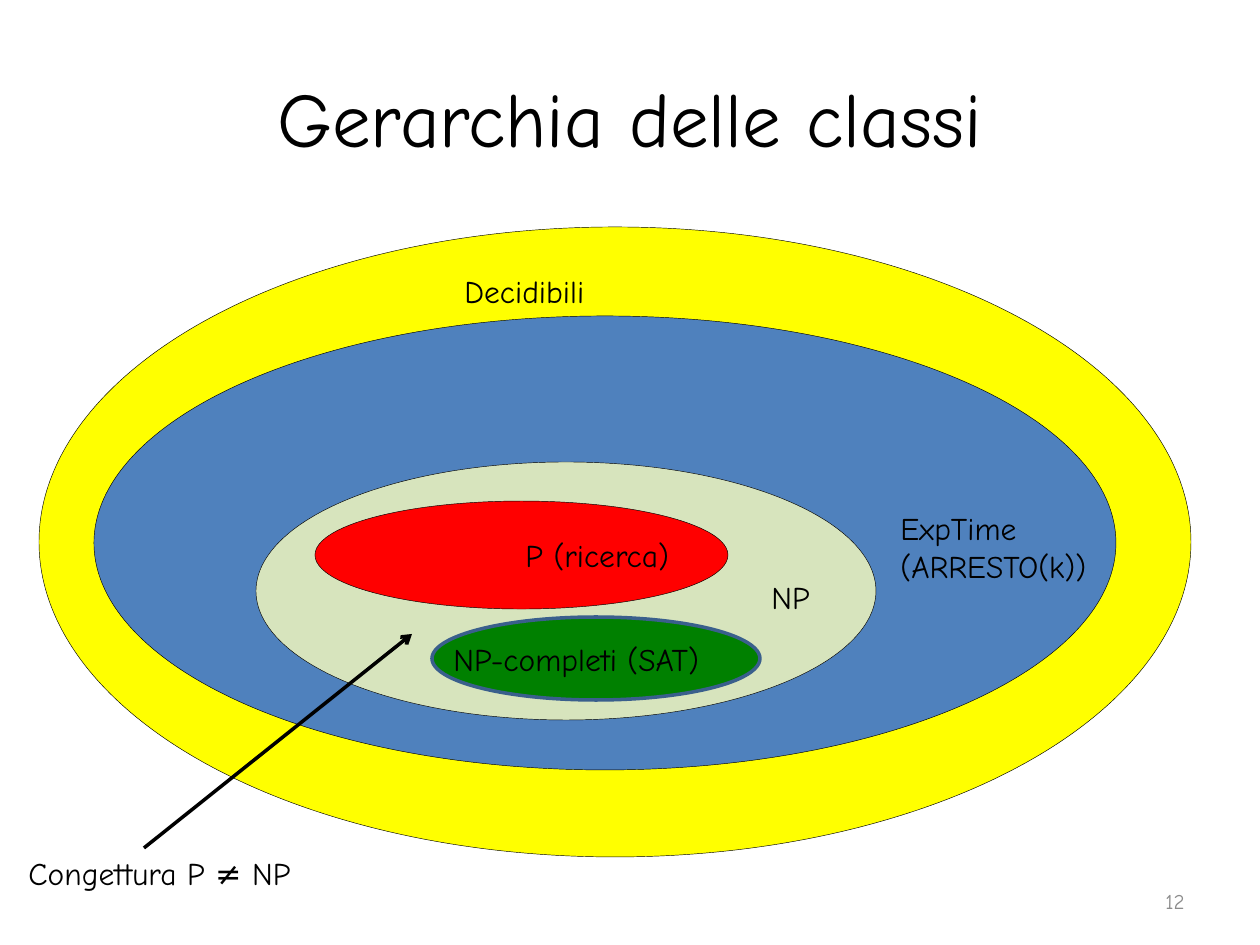
from lxml import etree
from pptx import Presentation
from pptx.dml.color import RGBColor
from pptx.enum.shapes import MSO_CONNECTOR, MSO_SHAPE
from pptx.enum.text import MSO_ANCHOR, MSO_AUTO_SIZE, PP_ALIGN
from pptx.oxml.ns import qn
from pptx.util import Emu, Pt

OVAL = MSO_SHAPE.OVAL
STRAIGHT = MSO_CONNECTOR.STRAIGHT
MIDDLE, TOP = MSO_ANCHOR.MIDDLE, MSO_ANCHOR.TOP
LEFT, CENTER, RIGHT = PP_ALIGN.LEFT, PP_ALIGN.CENTER, PP_ALIGN.RIGHT
GROW = MSO_AUTO_SIZE.SHAPE_TO_FIT_TEXT
TITLE_ONLY = 5

PX_PER_INCH = 126
FONT = "Comic Neue"

BLACK = RGBColor(0x00, 0x00, 0x00)
GRAY = RGBColor(0x8C, 0x8C, 0x8C)
YELLOW = RGBColor(0xFF, 0xFF, 0x00)
BLUE = RGBColor(0x4F, 0x81, 0xBD)
PALE_GREEN = RGBColor(0xD7, 0xE4, 0xBD)
RED = RGBColor(0xFF, 0x00, 0x00)
GREEN = RGBColor(0x00, 0x80, 0x00)
DARK_BLUE = RGBColor(0x3A, 0x5F, 0x8C)

# Complexity classes, from the outermost: box, fill, line colour, line width
CLASSES = [
    ((39, 227, 1152, 630), YELLOW, BLACK, 0.25),
    ((94, 316, 1022, 454), BLUE, BLACK, 0.25),
    ((256, 462, 620, 258), PALE_GREEN, BLACK, 0.25),
    ((315, 501, 413, 108), RED, BLACK, 0.25),
    ((432, 617, 328, 83), GREEN, DARK_BLUE, 2),
]

LABELS = [
    ("Decidibili", (452, 266, 178, 50)),
    ("ExpTime\n(ARRESTO(k))", (888, 503, 248, 89)),
    ("P (ricerca)", (513, 530, 185, 50)),
    ("NP", (759, 572, 168, 50)),
    ("NP-completi (SAT)", (441, 634, 349, 50)),
    ("Congettura P ≠ NP", (16, 848, 299, 50)),
]


def px(*lengths):
    return [Emu(round(length * 914400 / PX_PER_INCH)) for length in lengths]


def set_text(shape, text, size, color=BLACK, align=LEFT, anchor=TOP):
    text_frame = shape.text_frame
    text_frame.text = text
    text_frame.word_wrap = True
    text_frame.vertical_anchor = anchor
    for paragraph in text_frame.paragraphs:
        paragraph.alignment = align
        for run in paragraph.runs:
            run.font.name = FONT
            run.font.size = Pt(size)
            run.font.color.rgb = color


def add_title(slide, text, box):
    title = slide.shapes.title
    title.left, title.top, title.width, title.height = px(*box)
    set_text(title, text, 44, align=CENTER, anchor=MIDDLE)


def add_ellipse(slide, box, fill, line_color, line_width):
    ellipse = slide.shapes.add_shape(OVAL, *px(*box))
    ellipse.shadow.inherit = False
    ellipse.fill.solid()
    ellipse.fill.fore_color.rgb = fill
    ellipse.line.color.rgb = line_color
    ellipse.line.width = Pt(line_width)


def add_label(slide, text, box):
    label = slide.shapes.add_textbox(*px(*box))
    set_text(label, text, 18)
    label.text_frame.auto_size = GROW


def add_slide_number(slide, text, box):
    number = slide.shapes.add_textbox(*px(*box))
    set_text(number, text, 12, GRAY, RIGHT, MIDDLE)


def add_arrow(slide, start, end):
    arrow = slide.shapes.add_connector(STRAIGHT, *px(*start, *end))
    arrow.line.color.rgb = BLACK
    arrow.line.width = Pt(2)
    line = arrow.line._get_or_add_ln()
    etree.SubElement(line, qn("a:tailEnd"), type="arrow")
    etree.SubElement(arrow._element.spPr, qn("a:effectLst"))


def main():
    presentation = Presentation()
    presentation.slide_width, presentation.slide_height = px(1260, 945)
    slide = presentation.slides.add_slide(presentation.slide_layouts[TITLE_ONLY])

    add_title(slide, "Gerarchia delle classi", (63, 38, 1134, 158))
    add_slide_number(slide, "12", (903, 876, 294, 50))

    # Nested classes and their names
    for box, fill, line_color, line_width in CLASSES:
        add_ellipse(slide, box, fill, line_color, line_width)
    for text, box in LABELS:
        add_label(slide, text, box)

    # From the conjecture to the NP class
    add_arrow(slide, (144, 848), (412, 634))

    presentation.save("out.pptx")


if __name__ == "__main__":
    main()
